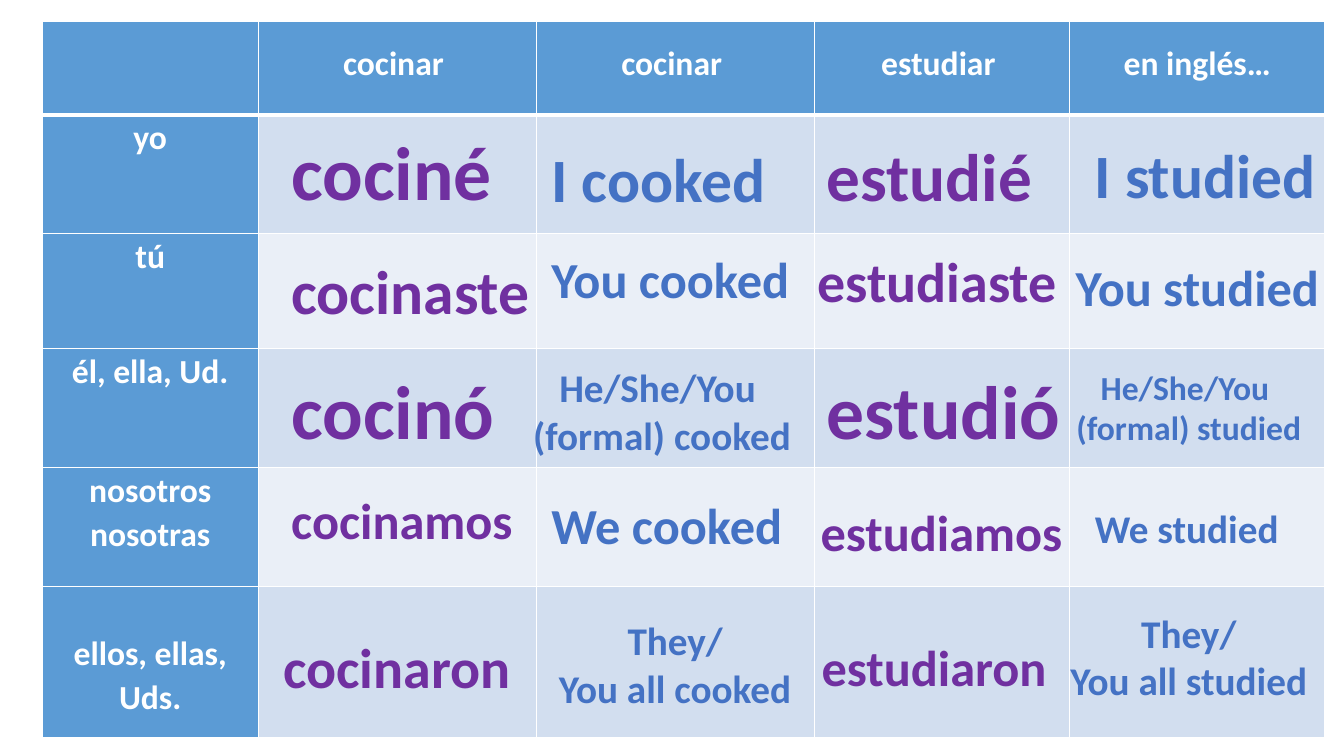
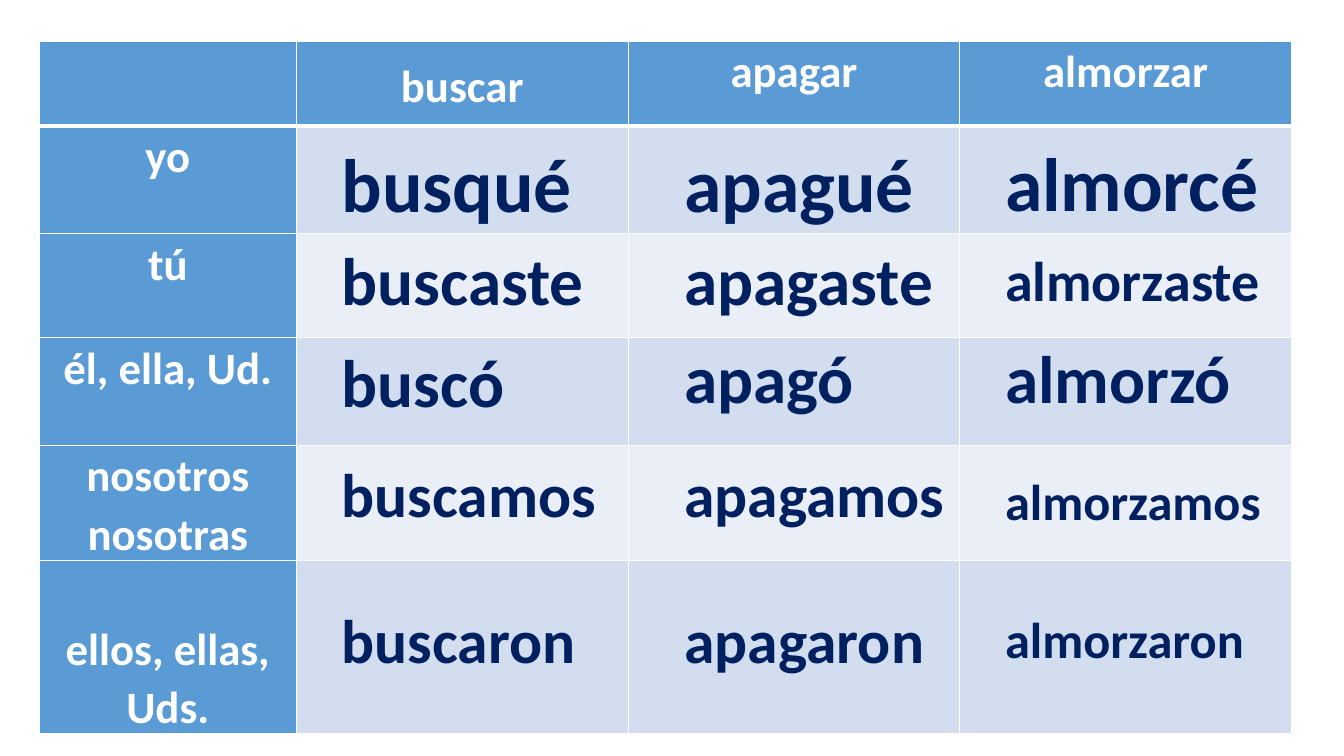
from itertools import accumulate

from lxml import etree
from pptx import Presentation
from pptx.dml.color import RGBColor
from pptx.enum.text import MSO_AUTO_SIZE, PP_ALIGN
from pptx.oxml.ns import qn
from pptx.util import Inches, Pt

CENTER, LEFT = PP_ALIGN.CENTER, PP_ALIGN.LEFT
GROW = MSO_AUTO_SIZE.SHAPE_TO_FIT_TEXT

SLIDE_WIDTH, SLIDE_HEIGHT = 13.33, 7.5
FONT = "Calibri"
LINE_SPACING = 1.07
LINE_HEIGHT = 1.22  # natural line height of the font, as a share of its size
ANSWER_WIDTH = 3.09
COLORS = {
    "white": "FFFFFF",
    "header": "5B9BD5",
    "band_dark": "D2DEEF",
    "band_light": "EAEFF7",
    "purple": "7030A0",
    "blue": "4472C4",
    "navy": "002060",
}
PRONOUNS = ["yo", "tú", "él, ella, Ud.", "nosotros\nnosotras", "ellos, ellas, Uds."]

# Each answer: text, size, indent from its column, drop from the top of its row
REGULAR_VERBS = {
    "origin": (0.42, 0.21),
    "columns": [2.14, 2.76, 2.76, 2.53, 2.53],
    "rows": [0.93, 1.18, 1.14, 1.18, 1.18, 1.5],
    "label_size": 24,
    # Heading and the size of the gap line above it
    "headings": [("cocinar ", 10.5), ("cocinar ", 10.5),
                 ("estudiar ", 10.5), ("en inglés…", 10.5)],
    "answers": [
        ("purple", [("cociné", 54, 0.23, 0.05),
                    ("cocinaste", 44, 0.23, 0.14),
                    ("cocinó", 54, 0.23, 0.1),
                    ("cocinamos", 36, 0.23, 0.16),
                    ("cocinaron", 40, 0.15, 0.41)]),
        ("blue", [("I cooked", 44, 0.05, 0.21),
                  ("You cooked", 36, 0.05, 0.09),
                  ("He/She/You \n(formal) cooked", 28, -0.3, 0.1),
                  ("We cooked", 36, 0.05, 0.21),
                  ("They/\nYou all cooked", 28, -0.17, 0.25)]),
        ("purple", [("estudié", 48, 0.02, 0.14),
                    ("estudiaste", 40, -0.07, 0.08),
                    ("estudió", 54, 0.02, 0.1),
                    ("estudiamos", 36, -0.04, 0.28),
                    ("estudiaron", 36, -0.03, 0.44)]),
        ("blue", [("I studied", 44, 0.15, 0.17),
                  ("You studied", 36, -0.04, 0.17),
                  ("He/She/You \n(formal) studied", 24, -0.36, 0.13),
                  ("We studied", 28, 0.15, 0.31),
                  ("They/\nYou all studied", 28, -0.36, 0.18)]),
    ],
}
SPELLING_CHANGES = {
    "origin": (0.39, 0.41),
    "columns": [2.55, 3.29, 3.29, 3.29],
    "rows": [0.84, 1.07, 1.03, 1.07, 1.12, 1.7],
    "label_size": 32,
    "headings": [("buscar", 8), ("apagar", 0), ("almorzar", 0)],
    "answers": [
        ("navy", [("busqué", 54, 0.35, 0.06),
                  ("buscaste", 48, 0.35, 0),
                  ("buscó", 48, 0.35, -0.02),
                  ("buscamos", 44, 0.35, 0.05),
                  ("buscaron", 44, 0.35, 0.38)]),
        ("navy", [("apagué", 54, 0.46, 0.06),
                  ("apagaste", 48, 0.46, 0),
                  ("apagó", 48, 0.46, -0.06),
                  ("apagamos", 44, 0.46, 0.05),
                  ("apagaron", 44, 0.46, 0.38)]),
        ("navy", [("almorcé", 54, 0.35, 0.05),
                  ("almorzaste", 40, 0.35, 0.07),
                  ("almorzó", 48, 0.35, -0.06),
                  ("almorzamos", 36, 0.35, 0.19),
                  ("almorzaron", 36, 0.35, 0.44)]),
    ],
}


def color(name):
    return RGBColor.from_string(COLORS[name])


def write_lines(frame, text, size, color_name, alignment, spacing=None):
    """Write each line of the text as a bold paragraph."""
    for index, line in enumerate(text.split("\n")):
        paragraph = frame.add_paragraph() if index else frame.paragraphs[0]
        paragraph.alignment = alignment
        paragraph.line_spacing = spacing
        run = paragraph.add_run()
        run.text = line
        run.font.name = FONT
        run.font.size = Pt(size)
        run.font.bold = True
        run.font.color.rgb = color(color_name)


def set_borders(cell, top, bottom):
    """Draw white cell borders; the widths are in points."""
    properties = cell._tc.get_or_add_tcPr()
    for side, width in (("L", 1), ("R", 1), ("T", top), ("B", bottom)):
        line = etree.SubElement(properties, qn(f"a:ln{side}"), w=str(Pt(width)))
        fill = etree.SubElement(line, qn("a:solidFill"))
        etree.SubElement(fill, qn("a:srgbClr"), val=COLORS["white"])


def write_label(cell, text, size, gap_size=0):
    """Write a centred label below a gap one line of gap_size high."""
    cell.margin_left = cell.margin_right = Inches(0.07)
    cell.margin_top = Pt(gap_size * LINE_HEIGHT * LINE_SPACING)
    cell.margin_bottom = 0
    write_lines(cell.text_frame, text, size, "white", CENTER, LINE_SPACING)


def add_verb_table(slide, chart):
    columns, rows = chart["columns"], chart["rows"]
    left, top = chart["origin"]
    table = slide.shapes.add_table(
        len(rows), len(columns), Inches(left), Inches(top),
        Inches(sum(columns)), Inches(sum(rows))).table
    for column, width in zip(table.columns, columns):
        column.width = Inches(width)
    for row, height in zip(table.rows, rows):
        row.height = Inches(height)

    # Borders and banded fills
    for row in range(len(rows)):
        for column in range(len(columns)):
            cell = table.cell(row, column)
            set_borders(cell, 3 if row == 1 else 1, 3 if row == 0 else 1)
            band = "band_dark" if row % 2 else "band_light"
            cell.fill.solid()
            cell.fill.fore_color.rgb = color(band if row and column else "header")

    # Headings and pronouns
    size = chart["label_size"]
    for column, (heading, gap_size) in enumerate(chart["headings"], 1):
        write_label(table.cell(0, column), heading, size, gap_size)
    for row, pronoun in enumerate(PRONOUNS, 1):
        gap_size = size if row == len(PRONOUNS) else 0
        write_label(table.cell(row, 0), pronoun, size, gap_size)


def add_answer(slide, text, size, color_name, left, top):
    line_count = text.count("\n") + 1
    width = min(ANSWER_WIDTH, SLIDE_WIDTH - left)
    height = line_count * size * LINE_HEIGHT / 72 + 0.1
    box = slide.shapes.add_textbox(Inches(left), Inches(top),
                                   Inches(width), Inches(height))
    box.text_frame.word_wrap = True
    box.text_frame.auto_size = GROW
    write_lines(box.text_frame, text, size, color_name,
                CENTER if line_count > 1 else LEFT)


def add_verb_slide(presentation, chart):
    slide = presentation.slides.add_slide(presentation.slide_layouts[6])
    add_verb_table(slide, chart)

    # Answers laid over the body cells
    left, top = chart["origin"]
    column_lefts = list(accumulate(chart["columns"], initial=left))[1:]
    row_tops = list(accumulate(chart["rows"], initial=top))[1:]
    for column_left, (color_name, answers) in zip(column_lefts, chart["answers"]):
        for row_top, (text, size, indent, drop) in zip(row_tops, answers):
            add_answer(slide, text, size, color_name,
                       column_left + indent, row_top + drop)


def main():
    presentation = Presentation()
    presentation.slide_width = Inches(SLIDE_WIDTH)
    presentation.slide_height = Inches(SLIDE_HEIGHT)
    for chart in (REGULAR_VERBS, SPELLING_CHANGES):
        add_verb_slide(presentation, chart)
    presentation.save("out.pptx")


if __name__ == "__main__":
    main()
